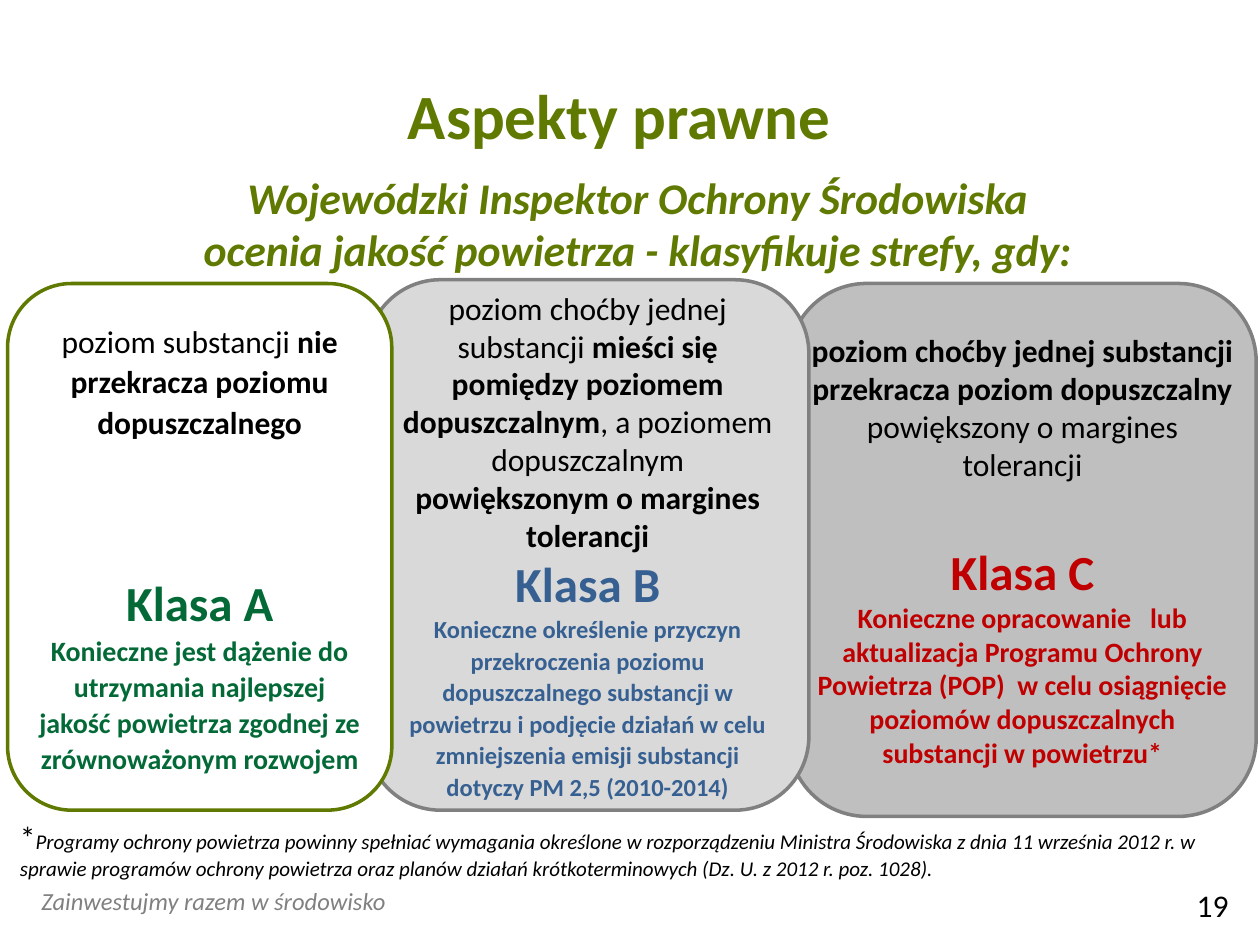
from dataclasses import dataclass

from pptx import Presentation
from pptx.dml.color import RGBColor
from pptx.enum.shapes import MSO_SHAPE
from pptx.enum.text import MSO_ANCHOR, MSO_AUTO_SIZE, PP_ALIGN
from pptx.util import Inches, Pt

ROUNDED = MSO_SHAPE.ROUNDED_RECTANGLE
MIDDLE, TOP = MSO_ANCHOR.MIDDLE, MSO_ANCHOR.TOP
NO_FIT = MSO_AUTO_SIZE.NONE
LEFT, CENTER, RIGHT = PP_ALIGN.LEFT, PP_ALIGN.CENTER, PP_ALIGN.RIGHT


@dataclass(frozen=True)
class Theme:
    font: str = "Calibri"
    text: str = "000000"
    olive: str = "5F7901"
    gray: str = "808080"
    white: str = "FFFFFF"
    light: str = "D9D9D9"
    mid: str = "BFBFBF"
    green: str = "026937"
    blue: str = "376092"
    red: str = "C00000"
    heading: int = 36
    title: int = 25
    grade: int = 28
    body: int = 18
    action: int = 16
    small: int = 14
    note: int = 12
    outline: int = 2


T = Theme()


def add_run(p, text, size, color=T.text, bold=False, italic=False):
    r = p.add_run()
    r.text = text
    f = r.font
    f.name, f.size, f.bold, f.italic = T.font, Pt(size), bold, italic
    f.color.rgb = RGBColor.from_string(color)


def setup_frame(tf, anchor=TOP, align=LEFT):
    tf.word_wrap, tf.auto_size, tf.vertical_anchor = True, NO_FIT, anchor
    p = tf.paragraphs[0]
    p.alignment = align
    return p


def add_text(s, box, anchor=TOP, align=LEFT):
    tf = s.shapes.add_textbox(*map(Inches, box)).text_frame
    return setup_frame(tf, anchor, align)


def add_headings(s, heading_box, title_box):
    p = add_text(s, heading_box, MIDDLE, CENTER)
    add_run(p, "Aspekty prawne", T.heading, T.olive, bold=True)

    title = s.shapes.title
    title.left, title.top, title.width, title.height = map(Inches, title_box)
    p = setup_frame(title.text_frame, MIDDLE, CENTER)
    add_run(p, "Wojewódzki Inspektor Ochrony Środowiska", T.title, T.olive, True, True)
    p.add_line_break()
    add_run(p, "ocenia jakość powietrza - klasyfikuje strefy, gdy:",
            T.title, T.olive, True, True)


def add_card(s, box, fill, line, color, condition, grade, actions,
             action_size, gap=0, spacing=(1, 1), inset=None):
    """Condition as (text, bold) runs, then the class name and its actions."""
    sp = s.shapes.add_shape(ROUNDED, *map(Inches, box))
    sp.shadow.inherit = False
    sp.fill.solid()
    sp.fill.fore_color.rgb = RGBColor.from_string(fill)
    sp.line.color.rgb = RGBColor.from_string(line)
    sp.line.width = Pt(T.outline)
    tf = sp.text_frame
    if inset is not None:
        tf.margin_left = tf.margin_right = Inches(inset)
        tf.margin_top = tf.margin_bottom = Inches(inset)

    p = setup_frame(tf, MIDDLE, CENTER)
    p.line_spacing = spacing[0]
    for text, bold in condition:
        add_run(p, text, T.body, bold=bold)

    p = tf.add_paragraph()
    p.alignment, p.line_spacing, p.space_before = CENTER, spacing[0], Pt(gap)
    add_run(p, grade, T.grade, color, bold=True)

    for action in actions:
        p = tf.add_paragraph()
        p.alignment, p.line_spacing = CENTER, spacing[1]
        add_run(p, action, action_size, color, bold=True)


def add_classes(s, left, top):
    # Cards overlap from left to right, so the last class lies at the back
    add_card(
        s, (left + 6.2, top + 0.03, 3.71, 4.23), T.mid, T.gray, T.red,
        [("poziom choćby jednej substancji przekracza poziom dopuszczalny ", True),
         ("powiększony o margines tolerancji", False)],
        "Klasa C",
        ["Konieczne opracowanie   lub aktualizacja Programu Ochrony Powietrza "
         "(POP)  w celu osiągnięcie poziomów dopuszczalnych substancji w powietrzu*"],
        T.action, gap=34, inset=0)
    add_card(
        s, (left + 2.85, top, 3.51, 4.21), T.light, T.gray, T.blue,
        [("poziom choćby jednej substancji ", False),
         ("mieści się pomiędzy poziomem dopuszczalnym", True),
         (", a poziomem dopuszczalnym ", False),
         ("powiększonym o margines tolerancji", True)],
        "Klasa B",
        ["Konieczne określenie przyczyn przekroczenia poziomu dopuszczalnego "
         "substancji w powietrzu i podjęcie działań w celu zmniejszenia emisji "
         "substancji",
         "dotyczy PM 2,5 (2010-2014)"],
        T.small, spacing=(1, 1.07))
    add_card(
        s, (left, top + 0.03, 3.05, 4.18), T.white, T.olive, T.green,
        [("poziom substancji ", False),
         ("nie przekracza poziomu dopuszczalnego", True)],
        "Klasa A",
        ["Konieczne jest dążenie do utrzymania najlepszej jakość powietrza "
         "zgodnej ze zrównoważonym rozwojem"],
        T.action, gap=73, spacing=(1.07, 1.07))


def add_footer(s, note_box, motto_box, number_box):
    p = add_text(s, note_box)
    add_run(p, "*", T.body)
    add_run(p, "Programy ochrony powietrza powinny spełniać wymagania określone w "
               "rozporządzeniu Ministra Środowiska z dnia 11 września 2012 r. w "
               "sprawie programów ochrony powietrza oraz planów działań "
               "krótkoterminowych (Dz. U. z 2012 r. poz. 1028).",
            T.note, italic=True)
    p = add_text(s, motto_box)
    add_run(p, "Zainwestujmy razem w środowisko", T.small, T.gray, italic=True)
    p = add_text(s, number_box, align=RIGHT)
    add_run(p, "19", T.body)


def main():
    prs = Presentation()
    prs.slide_width, prs.slide_height = Inches(10), Inches(7.5)
    s = prs.slides.add_slide(prs.slide_layouts.get_by_name("Title Only"))
    add_headings(s, (0.35, 0.32, 9.13, 1.17), (0.06, 1.23, 10, 1.08))
    add_classes(s, 0.06, 2.22)
    add_footer(s, (0.06, 6.44, 9.88, 0.61), (0.23, 6.98, 4.22, 0.34),
               (7.52, 6.98, 2.33, 0.4))
    prs.save("out.pptx")


if __name__ == "__main__":
    main()
